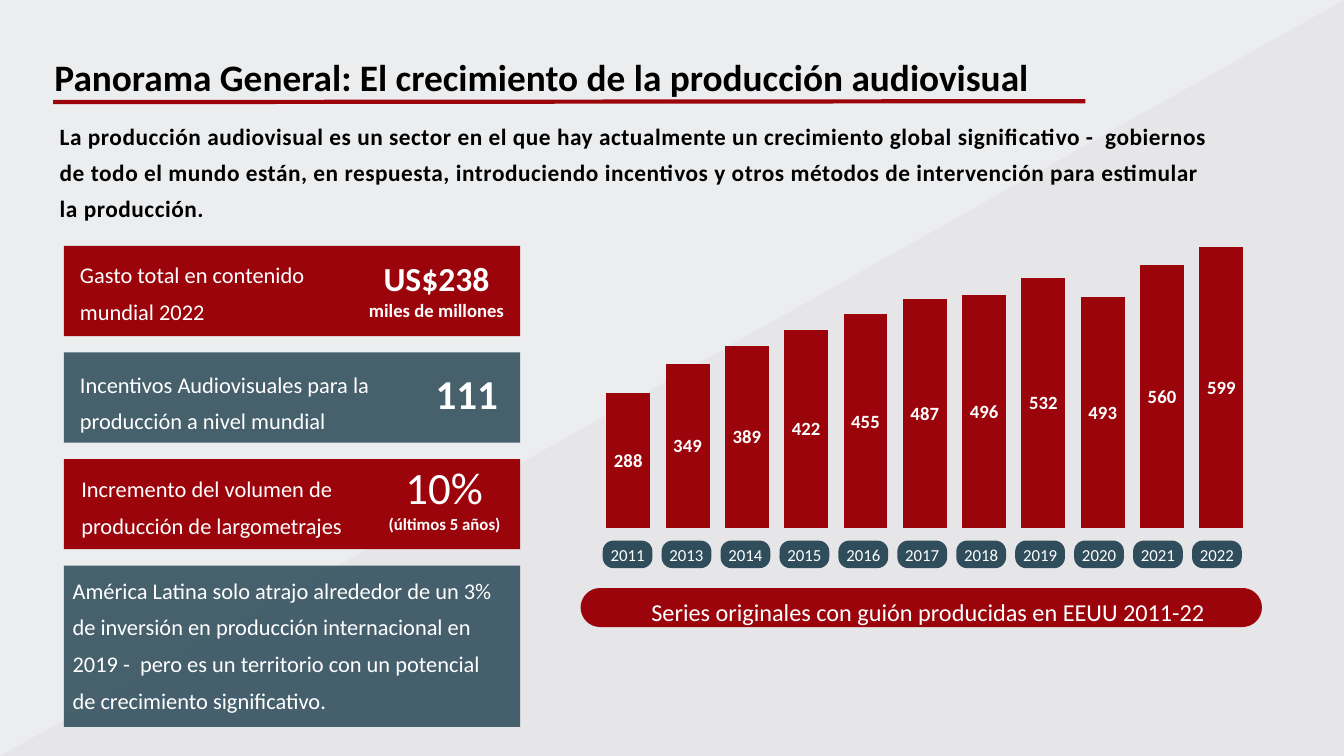
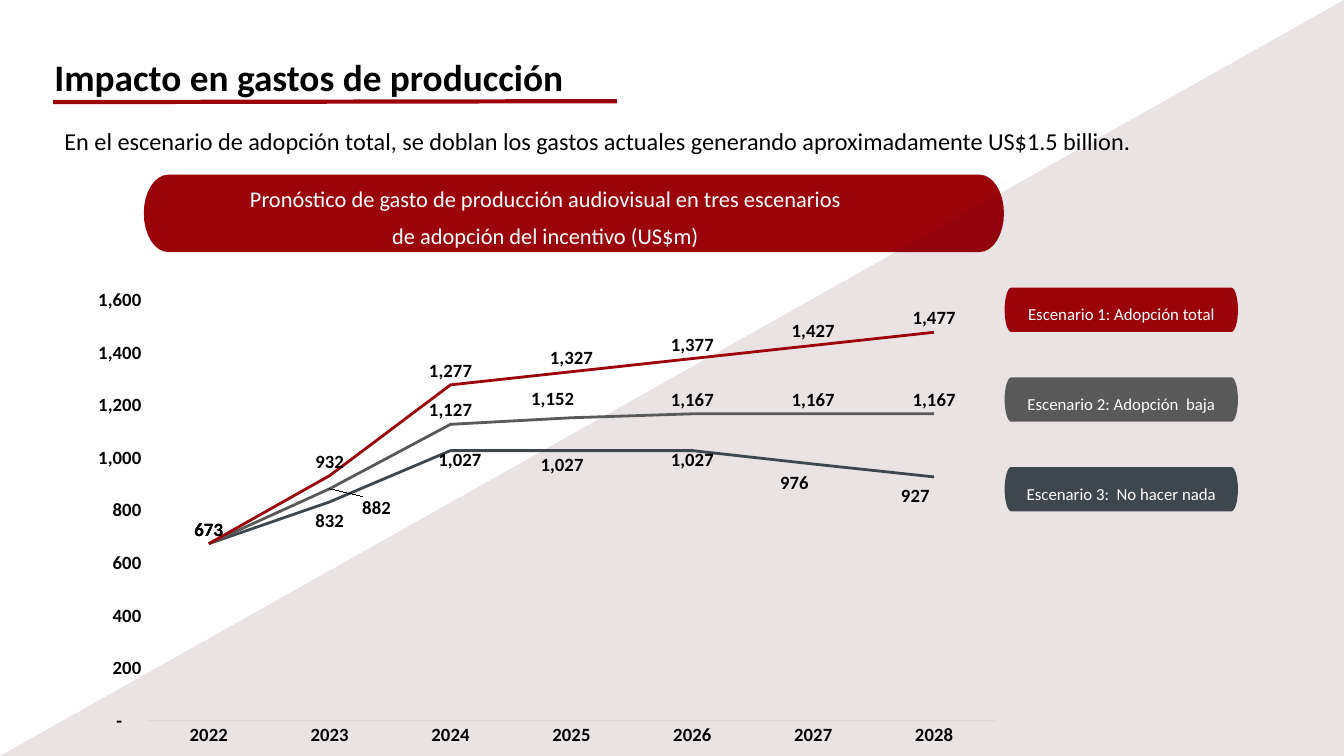
"""Build two slides on the growth of audiovisual production and its spending forecast."""
from math import cos, pi, sin

from lxml import etree
from pptx import Presentation
from pptx.chart import data
from pptx.dml import color
from pptx.enum import chart as ch, shapes, text
from pptx.oxml import ns
from pptx.util import Pt

FONT = "Calibri"
RED, SLATE, WINE = "9C040C", "304D5B", "470103"
GREY, COAL, WHITE, BLACK = "595959", "3E474D", "FFFFFF", "000000"
WIDTH, HEIGHT = 1440, 810
LEADING = 39.2

GROWTH = {
    "title": "Panorama General: El crecimiento de la producción audiovisual",
    "rule_end": 1162.8,
    "background": "ECEDEF",
    "shade": 3,
    "intro": "La producción audiovisual es un sector en el que hay actualmente un crecimiento global "
             "significativo -  gobiernos de todo el mundo están, en respuesta, introduciendo incentivos "
             "y otros métodos de intervención para estimular la producción.",
    "caption": "Series originales con guión producidas en EEUU 2011-22",
}
SERIES_BY_YEAR = {"2011": 288, "2013": 349, "2014": 389, "2015": 422, "2016": 455, "2017": 487,
                  "2018": 496, "2019": 532, "2020": 493, "2021": 560, "2022": 599}
# fill, opacity, height, statement, statement offset and width
CARDS = [
    (RED, 100, 96.6, "Gasto total en contenido mundial 2022", (17.3, 5.8), 280.8),
    (SLATE, 88, 96.6, "Incentivos Audiovisuales para la producción a nivel mundial", (17.3, 9), 352.8),
    (RED, 100, 96.6, "Incremento del volumen de producción de largometrajes", (18.7, 7.2), 316),
    (SLATE, 88, 172.6, "América Latina solo atrajo alrededor de un 3% de inversión en producción "
     "internacional en 2019 -  pero es un territorio con un potencial de crecimiento significativo.",
     (9.4, 1.7), 465),
]
FIGURES = [
    ((387.4, 276.5, 160.6, 67.7), "US$238\nmiles de millones", dict(size=(36, 20), bold=True)),
    ((419.8, 394.6, 160.6, 53.3), "111", dict(size=44, bold=True)),
    ((416.9, 511.2, 118, 42.5), "10%", dict(size=48, leading=LEADING)),
    ((403.2, 550.1, 146.2, 22), "(últimos 5 años)", dict(size=18, bold=True)),
]

IMPACT = {
    "title": "Impacto en gastos de producción",
    "rule_end": 661,
    "background": WHITE,
    "shade": 11,
    "intro": "En el escenario de adopción total, se doblan los gastos actuales generando "
             "aproximadamente US$1.5 billion.",
    "caption": "Pronóstico de gasto de producción audiovisual en tres escenarios "
               "de adopción del incentivo (US$m)",
}
FORECAST_YEARS = [str(year) for year in range(2022, 2029)]
# name, colour, spending, label shifts by point as fractions of the chart
SCENARIOS = [
    ("Escenario 3:  No hacer nada", COAL, (673, 832, 1027, 1027, 1027, 976, 927),
     {1: (0, .07), 2: (.01, .05), 3: (-.01, .06), 4: (0, .05), 5: (-.02, .07), 6: (-.02, .07)}),
    ("Escenario 2: Adopción  baja", GREY, (673, 882, 1127, 1152, 1167, 1167, 1167),
     {1: (.05, .07), 3: (-.02, -.01)}),
    ("Escenario 1: Adopción total", RED, (673, 932, 1277, 1327, 1377, 1427, 1477), {}),
]
MONEY = '_(* #,##0_);_(* \\(#,##0\\);_(* "-"??_);_(@_)'


def rgb(value):
    """Turn a hex string into a colour."""
    return color.RGBColor.from_string(value)


def points(box):
    """Turn plain numbers into lengths."""
    return [Pt(value) for value in box]


def paint(shape, fill, opacity=100):
    """Fill a shape flatly, without outline or shadow."""
    shape.shadow.inherit = False
    shape.fill.solid()
    shape.fill.fore_color.rgb = rgb(fill)
    shape.line.fill.background()
    if opacity < 100:
        tint = shape.element.spPr.find(".//" + ns.qn("a:srgbClr"))
        etree.SubElement(tint, ns.qn("a:alpha")).set("val", str(opacity * 1000))
    return shape


def write(shape, content, size=24, ink=WHITE, bold=False, align="LEFT", leading=None,
          inset=(0, 0), anchor="TOP", grow=True, spacing=None):
    """Put formatted text in a shape, one paragraph for each line."""
    frame = shape.text_frame
    frame.word_wrap = True
    frame.auto_size = text.MSO_AUTO_SIZE.SHAPE_TO_FIT_TEXT if grow else text.MSO_AUTO_SIZE.NONE
    frame.margin_left = frame.margin_right = Pt(inset[0])
    frame.margin_top = frame.margin_bottom = Pt(inset[1])
    frame.vertical_anchor = text.MSO_ANCHOR[anchor]
    frame.text = content
    sizes = size if isinstance(size, tuple) else (size,) * len(frame.paragraphs)
    for paragraph, height in zip(frame.paragraphs, sizes):
        paragraph.alignment = text.PP_ALIGN[align]
        if leading:
            paragraph.line_spacing = Pt(leading)
        for run in paragraph.runs:
            run.font.name, run.font.size, run.font.bold = FONT, Pt(height), bold
            run.font.color.rgb = rgb(ink)
            if spacing:
                run.font._element.set("spc", str(spacing))


def label(slide, box, content, **style):
    """Add a text box."""
    write(slide.shapes.add_textbox(*points(box)), content, **style)


def capsule(slide, box, cap, fill):
    """Draw a bar with half-elliptical ends."""
    left, top, width, height = box
    steps = [pi * (i / 16 - .5) for i in range(17)]
    middle = top + height / 2
    right_end = [(left + width - cap + cap * cos(a), middle + height / 2 * sin(a)) for a in steps]
    left_end = [(left + cap - cap * cos(a), middle - height / 2 * sin(a)) for a in steps]
    outline = [tuple(points(p)) for p in right_end + left_end]
    builder = slide.shapes.build_freeform(*outline[0], scale=1.0)
    builder.add_line_segments(outline[1:], close=True)
    paint(builder.convert_to_shape(), fill)


def shade(slide, opacity):
    """Lay the translucent diagonal over the slide."""
    diagonal = slide.shapes.add_shape(shapes.MSO_SHAPE.RIGHT_TRIANGLE, *points((0, 0, WIDTH, HEIGHT)))
    diagonal.element.spPr.xfrm.set("flipH", "1")
    paint(diagonal, WINE, opacity)


def start_slide(deck, content):
    """Add a slide with its background, title and red rule."""
    slide = deck.slides.add_slide(deck.slide_layouts[5])
    slide.background.fill.solid()
    slide.background.fill.fore_color.rgb = rgb(content["background"])
    title = slide.shapes.title
    title.left, title.top, title.width, title.height = points((58.3, 22.3, 1128, 74.2))
    write(title, content["title"], size=40, ink=BLACK, bold=True, leading=84)
    rule = slide.shapes.add_connector(shapes.MSO_CONNECTOR.STRAIGHT,
                                      *points((56.9, 109.4, content["rule_end"], 108.4)))
    rule.line.color.rgb, rule.line.width = rgb(RED), Pt(4.5)
    etree.SubElement(rule.element.spPr, ns.qn("a:effectLst"))
    return slide


def add_plot(slide, kind, box, categories, series, top, size):
    """Add a bare chart with its series and value labels."""
    table = data.CategoryChartData(number_format="#,##0")
    table.categories = categories
    for name, values in series:
        table.add_series(name, values)
    chart = slide.shapes.add_chart(kind, *points(box), table).chart
    chart.has_legend = chart.has_title = False
    chart.font.name, chart.font.size, chart.font.bold = FONT, Pt(size), True
    chart.font.color.rgb = rgb(BLACK)
    chart.plots[0].vary_by_categories = False
    chart.value_axis.minimum_scale, chart.value_axis.maximum_scale = 0, top
    chart.value_axis.has_major_gridlines = False
    return chart


def manual_layout(parent, position, **values):
    """Place a chart part by fractions of the chart."""
    layout = etree.Element(ns.qn("c:layout"))
    manual = etree.SubElement(layout, ns.qn("c:manualLayout"))
    for key, value in values.items():
        etree.SubElement(manual, ns.qn("c:" + key)).set("val", str(value))
    parent.insert(position, layout)


def label_series(series, position, ink):
    """Show the values of a series."""
    labels = series.data_labels
    labels.show_value, labels.position = True, position
    labels.font.name, labels.font.size, labels.font.bold = FONT, Pt(20), True
    labels.font.color.rgb = rgb(ink)


def series_chart(slide):
    """Chart the scripted series by year."""
    chart = add_plot(slide, ch.XL_CHART_TYPE.COLUMN_CLUSTERED, (611.3, 187.2, 751.7, 440.6),
                     list(SERIES_BY_YEAR), [("Series", list(SERIES_BY_YEAR.values()))], 700, 10)
    chart.category_axis.visible = chart.value_axis.visible = False
    plot = chart.plots[0]
    plot.gap_width = 35
    bars = plot.series[0]
    bars.format.fill.solid()
    bars.format.fill.fore_color.rgb = rgb(RED)
    label_series(bars, ch.XL_LABEL_POSITION.CENTER, WHITE)
    area = chart.element.find(".//" + ns.qn("c:plotArea"))
    for old in area.findall(ns.qn("c:layout")):
        area.remove(old)
    manual_layout(area, 0, layoutTarget="inner", xMode="edge", yMode="edge", x=.04, y=.06, w=.93, h=.8)


def forecast_chart(slide):
    """Chart the spending of each scenario."""
    chart = add_plot(slide, ch.XL_CHART_TYPE.LINE, (80.6, 298.8, 1005.1, 511.2), FORECAST_YEARS,
                     [(name, values) for name, _, values, _ in SCENARIOS], 1600, 20)
    years, money = chart.category_axis, chart.value_axis
    years.major_tick_mark = money.major_tick_mark = ch.XL_TICK_MARK.NONE
    years.format.line.color.rgb, years.format.line.width = rgb("D9D9D9"), Pt(.75)
    money.format.line.fill.background()
    money.major_unit = 200
    money.tick_labels.number_format = MONEY
    money.tick_labels.number_format_is_linked = False
    for line, (_, ink, _, shifts) in zip(chart.plots[0].series, SCENARIOS):
        line.smooth = False
        line.marker.style = ch.XL_MARKER_STYLE.NONE
        line.format.line.color.rgb, line.format.line.width = rgb(ink), Pt(3)
        label_series(line, ch.XL_LABEL_POSITION.ABOVE, BLACK)
        for point in shifts:
            line.points[point].data_label.position = ch.XL_LABEL_POSITION.ABOVE
        for mark, (x, y) in zip(line._element.iter(ns.qn("c:dLbl")), shifts.values()):
            manual_layout(mark, 1, x=x, y=y)


def growth_slide(deck):
    """Build the overview of production growth."""
    slide = start_slide(deck, GROWTH)
    shade(slide, GROWTH["shade"])
    label(slide, (56.9, 119.5, 1249.2, 119.5), GROWTH["intro"], size=25, ink=BLACK, bold=True,
          leading=38.2, inset=(7.2, 3.6), spacing=60)
    capsule(slide, (622.1, 630, 730, 41.8), 20.9, RED)
    label(slide, (663.1, 631.4, 663.1, 36.7), GROWTH["caption"], size=26, align="CENTER", leading=LEADING)
    series_chart(slide)
    for i, year in enumerate(SERIES_BY_YEAR):
        badge = slide.shapes.add_shape(shapes.MSO_SHAPE.ROUNDED_RECTANGLE,
                                       *points((645.8 + 63.14 * i, 579.2, 53.3, 29.5)))
        badge.adjustments[0] = .39
        write(paint(badge, SLATE), year, size=18, align="CENTER", anchor="MIDDLE", grow=False)
    for i, (fill, opacity, height, statement, (dx, dy), width) in enumerate(CARDS):
        left, top = 68.4, 263.5 + 114.2 * i
        card = slide.shapes.add_shape(shapes.MSO_SHAPE.RECTANGLE, *points((left, top, 489, height)))
        paint(card, fill, opacity)
        label(slide, (left + dx, top + dy, width, height - 21), statement, leading=LEADING)
    for box, figure, style in FIGURES:
        label(slide, box, figure, align="CENTER", **style)


def impact_slide(deck):
    """Build the forecast of production spending."""
    slide = start_slide(deck, IMPACT)
    capsule(slide, (154.1, 187.2, 921.6, 82.8), 26, RED)
    label(slide, (261.4, 187.9, 645.8, 75.6), IMPACT["caption"], align="CENTER", leading=LEADING)
    shade(slide, IMPACT["shade"])
    label(slide, (61.9, 131.8, 1181.5, 38.9), IMPACT["intro"], size=26, ink=BLACK, inset=(7.2, 3.6))
    for i, (name, fill, _, _) in enumerate(reversed(SCENARIOS)):
        left, top, width = 1076.4, 308.2 + 96.1 * i, 250
        capsule(slide, (left, top, width, 47.5), 7.2, fill)
        label(slide, (left, top, width, 34.6), name, size=18, align="CENTER", leading=LEADING)
    forecast_chart(slide)


def main():
    """Build and save the deck."""
    deck = Presentation()
    deck.slide_width, deck.slide_height = Pt(WIDTH), Pt(HEIGHT)
    growth_slide(deck)
    impact_slide(deck)
    deck.save("out.pptx")


if __name__ == "__main__":
    main()
